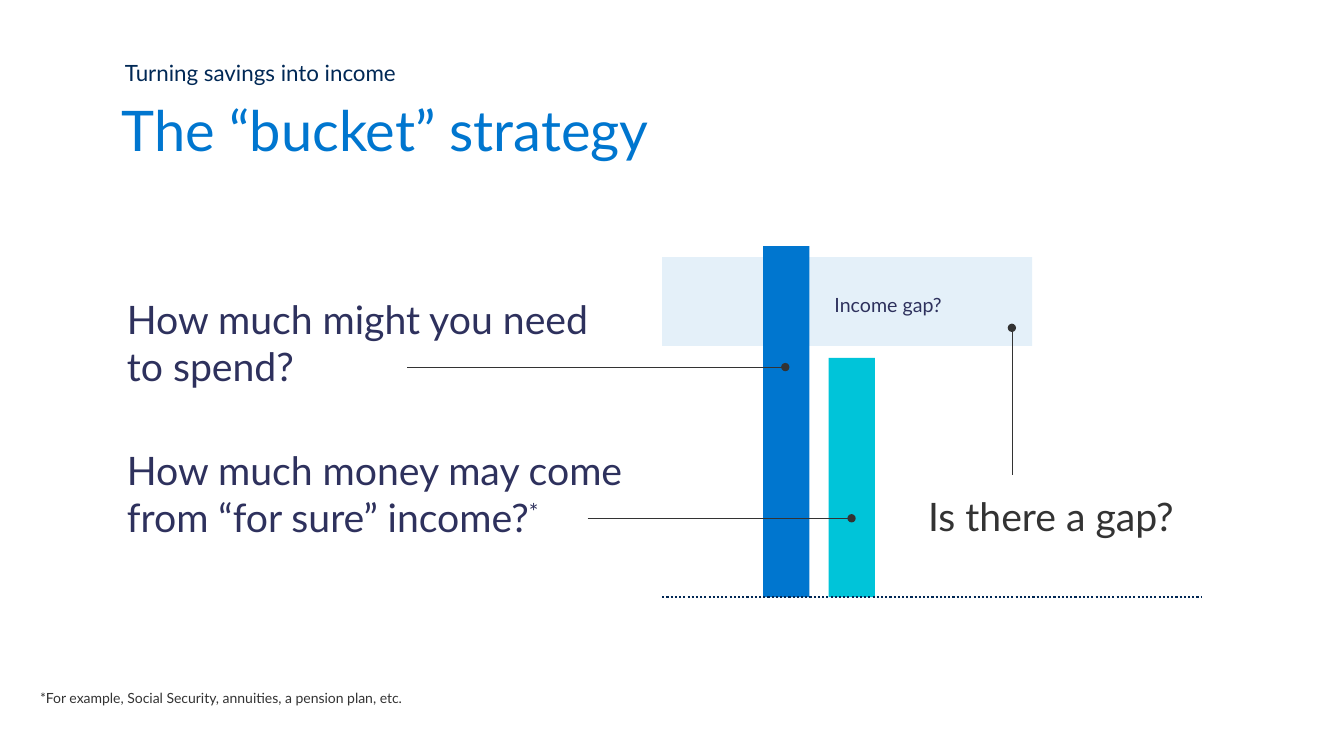
from dataclasses import dataclass

from pptx import Presentation
from pptx import util as u
from pptx.dml.color import RGBColor
from pptx.enum import dml, shapes, text
from pptx.oxml.ns import qn
from lxml import etree


@dataclass(frozen=True)
class Theme:
    font: str = "Lato"
    blue: str = "0076CF"
    teal: str = "00C4D9"
    pale: str = "E4F0F9"
    navy: str = "002855"
    rule: str = "012754"
    indigo: str = "2E315D"
    gray: str = "333333"
    title: int = 40
    question: int = 28
    kicker: int = 16
    label: int = 14
    note: int = 10


T = Theme()
WIDE, TIGHT = (0.33, 0.18), (0.25, 0.13)  # text insets in cm: sides, top and bottom
BASE = 15.05  # where both bars stand
BAR_WIDTH = 1.17

TITLE = ("The “bucket” strategy", (2.82, 2.21, 20.85, 2.39))
# words, superscript mark, box, size, colour, insets
TEXTS = [
    ("Turning savings into income", "", (2.9, 1.37, 15.27, 1.47), T.kicker, T.navy, TIGHT),
    ("How much might you need to spend?", "", (2.87, 7.26, 12.32, 2.77), T.question, T.indigo, WIDE),
    ("How much money may come from “for sure” income?", "*", (2.87, 11.07, 14.71, 2.77),
     T.question, T.indigo, WIDE),
    ("Is there a gap?", "", (23.06, 12.22, 8.76, 1.98), T.question, T.gray, WIDE),
    ("Income gap?", "", (20.78, 7.24, 5.26, 0.86), T.label, T.indigo, TIGHT),
    ("*For example, Social Security, annuities, a pension plan, etc.", "",
     (0.76, 17.25, 10.31, 0.69), T.note, T.gray, TIGHT),
]
GAP_BAND = (16.69, 6.48, 9.32, 2.24)
BARS = [(19.23, 6.2, T.blue), (20.88, 9.02, T.teal)]  # left, top, colour
POINTERS = [
    (10.26, 9.25, 19.79, 9.25),
    (14.81, 13.06, 21.46, 13.06),
    (25.5, 11.96, 25.5, 8.26),
]
BASELINE = (16.69, BASE, 30.3, BASE)


def cm(values):
    return [u.Cm(v) for v in values]


def fill_text(sp, words, size, color, insets, mark=""):
    tf = sp.text_frame
    tf.word_wrap = True
    tf.auto_size = text.MSO_AUTO_SIZE.NONE
    tf.vertical_anchor = text.MSO_ANCHOR.TOP
    tf.margin_left = tf.margin_right = u.Cm(insets[0])
    tf.margin_top = tf.margin_bottom = u.Cm(insets[1])
    p = tf.paragraphs[0]
    p.alignment = text.PP_ALIGN.LEFT
    p.add_run().text = words
    if mark:
        r = p.add_run()
        r.text = mark
        r._r.get_or_add_rPr().set("baseline", "30000")
    p.font.name, p.font.size = T.font, u.Pt(size)
    p.font.color.rgb = RGBColor.from_string(color)
    return p


def add_block(s, box, color):
    sp = s.shapes.add_shape(shapes.MSO_SHAPE.RECTANGLE, *cm(box))
    sp.shadow.inherit = False
    sp.fill.solid()
    sp.fill.fore_color.rgb = RGBColor.from_string(color)
    sp.line.fill.background()


def add_line(s, ends, color, width):
    line = s.shapes.add_connector(shapes.MSO_CONNECTOR.STRAIGHT, *cm(ends))
    line.line.color.rgb = RGBColor.from_string(color)
    line.line.width = u.Pt(width)
    etree.SubElement(line._element.spPr, qn("a:effectLst"))
    return line


def main():
    prs = Presentation()
    prs.slide_width, prs.slide_height = u.Cm(33.87), u.Cm(19.05)
    s = prs.slides.add_slide(prs.slide_layouts[5])

    title = s.shapes.title
    words, box = TITLE
    title.left, title.top, title.width, title.height = cm(box)
    fill_text(title, words, T.title, T.blue, TIGHT).line_spacing = u.Pt(50)

    add_block(s, GAP_BAND, T.pale)
    for left, top, color in BARS:
        add_block(s, (left, top, BAR_WIDTH, BASE - top), color)

    for words, mark, box, size, color, insets in TEXTS:
        fill_text(s.shapes.add_textbox(*cm(box)), words, size, color, insets, mark)

    for ends in POINTERS:
        pointer = add_line(s, ends, T.gray, 0.5)
        etree.SubElement(pointer.line._get_or_add_ln(), qn("a:tailEnd"), type="oval")
    add_line(s, BASELINE, T.rule, 1.5).line.dash_style = dml.MSO_LINE.ROUND_DOT

    prs.save("out.pptx")


if __name__ == "__main__":
    main()
